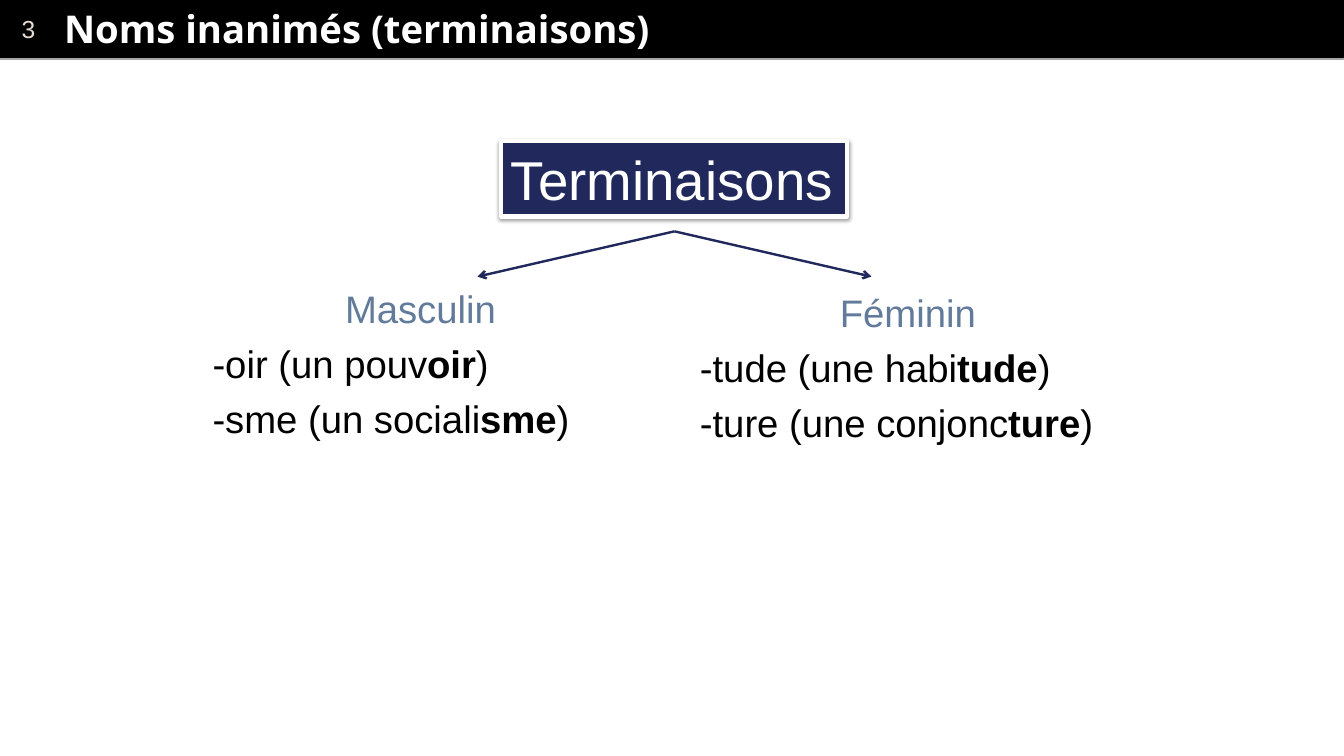
import dataclasses
import typing

import lxml.etree
import pptx
import pptx.dml.color
import pptx.enum.shapes
import pptx.enum.text
import pptx.oxml.ns
import pptx.util

Inches = pptx.util.Inches
Pt = pptx.util.Pt
Align = pptx.enum.text.PP_ALIGN
Anchor = pptx.enum.text.MSO_ANCHOR
NAVY = "21295C"
WHITE = "FFFFFF"
BLACK = "000000"


@dataclasses.dataclass
class Ending:
    lead: str
    stem: str


@dataclasses.dataclass
class Gender:
    left: float
    top: float
    head: str
    tip: float
    rows: list[Ending]


@dataclasses.dataclass
class Stroke:
    start: tuple[float, float]
    end: tuple[float, float]
    color: str
    width: float
    arrow: bool = False


GENDERS = [
    Gender(7.01, 2.89, "Féminin", 8.85,
           [Ending("-tude (une habi", "tude"), Ending("-ture (une conjonc", "ture")]),
    Gender(2.06, 2.85, "Masculin", 4.85,
           [Ending("-oir (un pouv", "oir"), Ending("-sme (un sociali", "sme")]),
]


def paint(target: typing.Any, color: str) -> None:
    target.rgb = pptx.dml.color.RGBColor.from_string(color)


def style(run: typing.Any, size: float, color: str, bold: bool = False,
          face: str = "Arial") -> None:
    run.font.name = face
    run.font.size = Pt(size)
    run.font.bold = bold
    paint(run.font.color, color)


def nest(parent: typing.Any, tag: str, **values: str) -> typing.Any:
    return lxml.etree.SubElement(parent, pptx.oxml.ns.qn(tag), values)


def draw_box(slide: typing.Any, place: tuple[float, ...], fill: str, edge: str,
             width: float) -> typing.Any:
    box = slide.shapes.add_shape(pptx.enum.shapes.MSO_SHAPE.RECTANGLE, *map(Inches, place))
    box.shadow.inherit = False
    box.fill.solid()
    paint(box.fill.fore_color, fill)
    paint(box.line.color, edge)
    box.line.width = Pt(width)
    return box


def draw_line(slide: typing.Any, stroke: Stroke) -> None:
    ends = map(Inches, stroke.start + stroke.end)
    line = slide.shapes.add_connector(pptx.enum.shapes.MSO_CONNECTOR.STRAIGHT, *ends)
    paint(line.line.color, stroke.color)
    line.line.width = Pt(stroke.width)
    if stroke.arrow:
        nest(line.line._get_or_add_ln(), "a:tailEnd", type="arrow")
    nest(line._element.spPr, "a:effectLst")


def draw_band(slide: typing.Any) -> None:
    band = draw_box(slide, (0, 0, 13.65, 0.58), BLACK, BLACK, 0.75)
    frame = band.text_frame
    frame.margin_left = Inches(0.22)
    frame.vertical_anchor = Anchor.MIDDLE
    frame.text = "3"
    frame.paragraphs[0].alignment = Align.LEFT
    style(frame.paragraphs[0].runs[0], 18, "E7DED1")
    draw_line(slide, Stroke((0, 0.6), (13.65, 0.6), "A6A6A6", 2))


def draw_title(slide: typing.Any) -> None:
    place = map(Inches, (0.61, 0.01, 12.85, 0.56))
    frame = slide.shapes.add_textbox(*place).text_frame
    frame.word_wrap = True
    frame.vertical_anchor = Anchor.MIDDLE
    frame.margin_left = frame.margin_right = Inches(0.04)
    frame.margin_top = frame.margin_bottom = Inches(0.04)
    frame.text = "Noms inanimés (terminaisons)"
    style(frame.paragraphs[0].runs[0], 28, WHITE, True, "Open Sans")


def draw_root(slide: typing.Any) -> None:
    root = draw_box(slide, (5.09, 1.43, 3.51, 0.77), NAVY, WHITE, 3)
    glow = nest(root._element.spPr.find(pptx.oxml.ns.qn("a:effectLst")), "a:outerShdw",
                blurRad=str(Pt(3.1)), dist=str(Pt(1.6)), dir="5400000", rotWithShape="0")
    nest(nest(glow, "a:srgbClr", val=BLACK), "a:alpha", val="38000")
    frame = root.text_frame
    frame.word_wrap = False
    frame.auto_size = pptx.enum.text.MSO_AUTO_SIZE.SHAPE_TO_FIT_TEXT
    frame.vertical_anchor = Anchor.TOP
    frame.text = "Terminaisons"
    frame.paragraphs[0].alignment = Align.LEFT
    style(frame.paragraphs[0].runs[0], 40, WHITE)


def draw_gender(slide: typing.Any, gender: Gender) -> None:
    place = map(Inches, (gender.left, gender.top, 4.42, 2.33))
    frame = slide.shapes.add_textbox(*place).text_frame
    frame.word_wrap = True
    frame.text = gender.head
    frame.paragraphs[0].alignment = Align.CENTER
    style(frame.paragraphs[0].runs[0], 28, "627B9A")
    for row in gender.rows:
        line = frame.add_paragraph()
        for text, bold in ((row.lead, False), (row.stem, True), (")", False)):
            run = line.add_run()
            run.text = text
            style(run, 28, BLACK, bold)
    for line in frame.paragraphs:
        line.space_before = Pt(6.5)
        props = line._p.get_or_add_pPr()
        props.set("marL", str(Inches(0.38)))
        props.set("indent", str(Inches(-0.38)))


def main() -> None:
    deck = pptx.Presentation()
    deck.slide_width = Inches(13.65)
    deck.slide_height = Inches(7.68)
    slide = deck.slides.add_slide(deck.slide_layouts[6])
    draw_band(slide)
    draw_title(slide)
    for gender in GENDERS:
        draw_gender(slide, gender)
    draw_root(slide)
    for gender in GENDERS:
        draw_line(slide, Stroke((6.85, 2.35), (gender.tip, 2.81), NAVY, 1.75, True))
    deck.save("out.pptx")


if __name__ == "__main__":
    main()
